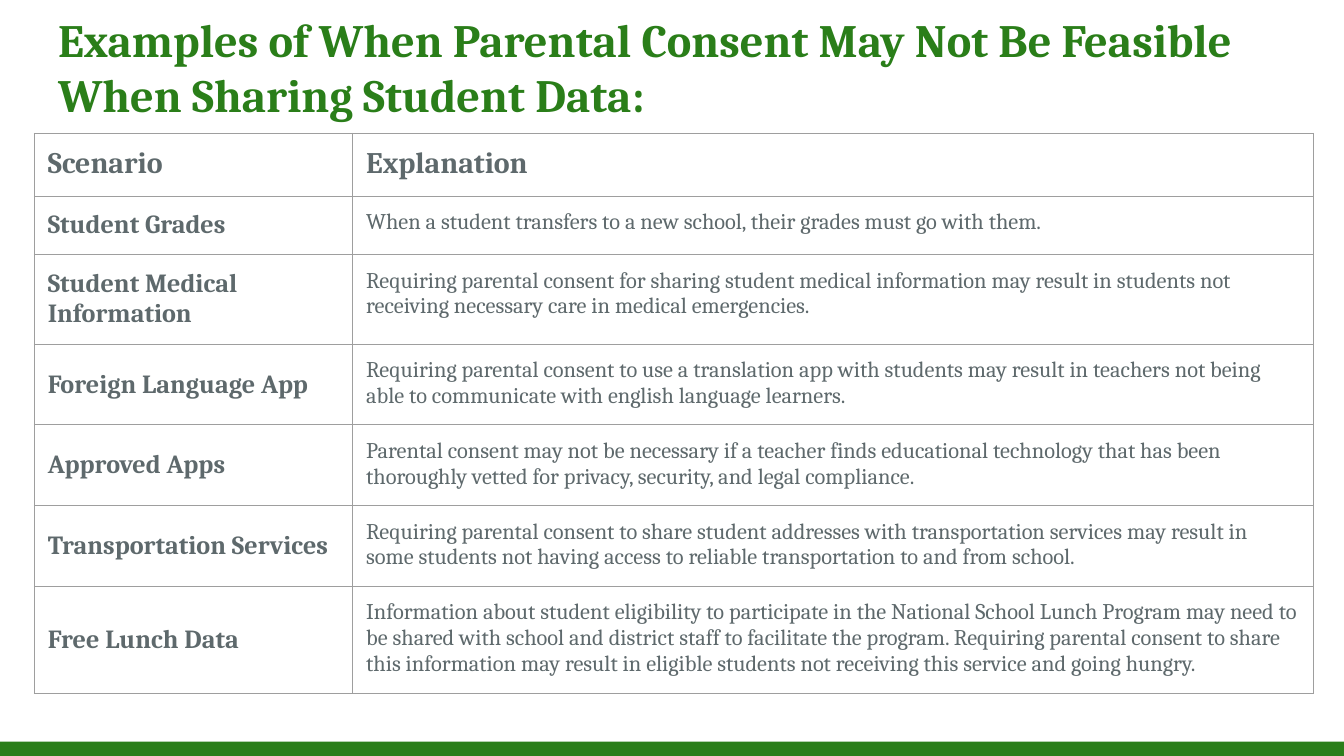
from lxml import etree
from pptx import Presentation
from pptx.dml.color import RGBColor
from pptx.enum import shapes, text
from pptx.oxml import ns
from pptx.util import Pt

TITLE = "Examples of When Parental Consent May Not Be Feasible When Sharing Student Data:"
HEADS = ("Scenario", "Explanation")
CASES = [
    ("Student Grades",
     "When a student transfers to a new school, their grades must go with them."),
    ("Student Medical Information",
     "Requiring parental consent for sharing student medical information may result "
     "in students not receiving necessary care in medical emergencies."),
    ("Foreign Language App",
     "Requiring parental consent to use a translation app with students may result "
     "in teachers not being able to communicate with english language learners."),
    ("Approved Apps",
     "Parental consent may not be necessary if a teacher finds educational technology "
     "that has been thoroughly vetted for privacy, security, and legal compliance."),
    ("Transportation Services",
     "Requiring parental consent to share student addresses with transportation services "
     "may result in some students not having access to reliable transportation to and "
     "from school."),
    ("Free Lunch Data",
     "Information about student eligibility to participate in the National School Lunch "
     "Program may need to be shared with school and district staff to facilitate the "
     "program. Requiring parental consent to share this information may result in "
     "eligible students not receiving this service and going hungry."),
]


class Theme:
    face = "Cambria"
    green, gray, rule = "2A7E19", "5E696C", "9E9E9E"
    title, head, label, body = 24.8, 16, 14, 12
    line = 0.75


WIDTH, HEIGHT = 720, 405
BAR = 7.7
COLS = (170.6, 514.8)
ROW = 30.2
PAD = 7.2


def style(frame, size, color, bold):
    font = frame.paragraphs[0].font
    font.name, font.size, font.bold = Theme.face, Pt(size), bold
    font.color.rgb = RGBColor.from_string(color)


def pad(box):
    box.margin_left = box.margin_right = Pt(PAD)
    box.margin_top = box.margin_bottom = Pt(PAD)


def edge(cell):
    """Rule all four sides of a cell; must come before its fill."""
    props = cell._tc.get_or_add_tcPr()
    for side in "LRTB":
        line = etree.SubElement(props, ns.qn(f"a:ln{side}"), w=str(Pt(Theme.line)))
        fill = etree.SubElement(line, ns.qn("a:solidFill"))
        etree.SubElement(fill, ns.qn("a:srgbClr"), val=Theme.rule)


def add_bar(slide):
    bar = slide.shapes.add_shape(shapes.MSO_SHAPE.RECTANGLE, Pt(0),
                                 Pt(HEIGHT - BAR), Pt(WIDTH), Pt(BAR))
    bar.shadow.inherit = False
    bar.fill.solid()
    bar.fill.fore_color.rgb = RGBColor.from_string(Theme.green)
    bar.line.fill.background()


def add_title(slide):
    frame = slide.shapes.add_textbox(Pt(24), Pt(-1.4), Pt(674), Pt(49)).text_frame
    frame.word_wrap = True
    pad(frame)
    frame.text = TITLE
    style(frame, Theme.title, Theme.green, True)


def add_grid(slide):
    rows = [HEADS, *CASES]
    table = slide.shapes.add_table(len(rows), len(COLS), Pt(18.4), Pt(71.5),
                                   Pt(sum(COLS)), Pt(ROW * len(rows))).table
    table.first_row = table.horz_banding = False
    for col, width in zip(table.columns, COLS):
        col.width = Pt(width)
    for r, row in enumerate(rows):
        table.rows[r].height = Pt(ROW)
        for c, words in enumerate(row):
            cell = table.cell(r, c)
            head, label = r == 0, c == 0
            cell.text = words
            pad(cell)
            if label and not head:
                cell.vertical_anchor = text.MSO_ANCHOR.MIDDLE
            size = Theme.head if head else Theme.label if label else Theme.body
            style(cell.text_frame, size, Theme.gray, head or label)
            edge(cell)
            cell.fill.background()


def main():
    deck = Presentation()
    deck.slide_width, deck.slide_height = Pt(WIDTH), Pt(HEIGHT)
    slide = deck.slides.add_slide(deck.slide_layouts[6])
    add_bar(slide)
    add_title(slide)
    add_grid(slide)
    deck.save("out.pptx")


if __name__ == "__main__":
    main()
